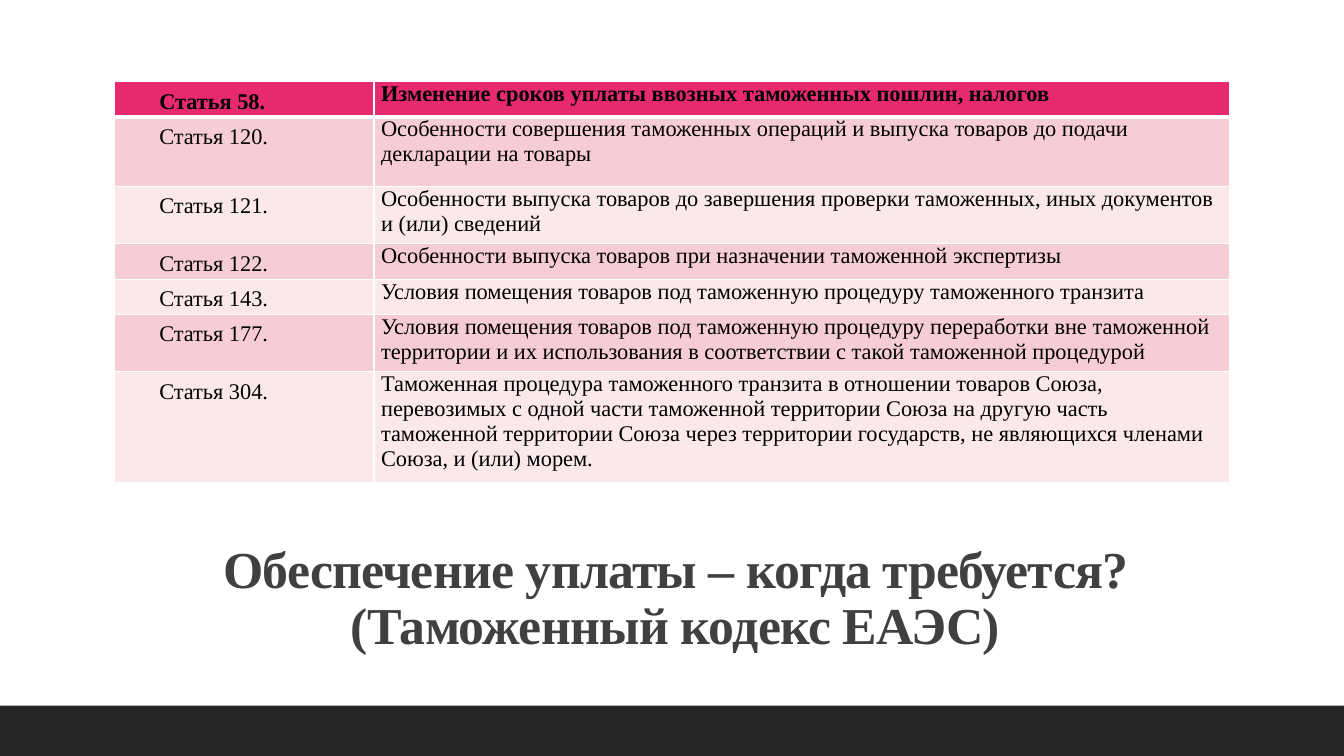
import pptx
import pptx.util
import pptx.dml.color
import pptx.enum.shapes
import pptx.enum.text
import pptx.oxml.ns
import lxml.etree

Inches, Pt = pptx.util.Inches, pptx.util.Pt
ALIGN = pptx.enum.text.PP_ALIGN
ANCHOR = pptx.enum.text.MSO_ANCHOR

TITLE = "Обеспечение уплаты – когда требуется? (Таможенный кодекс ЕАЭС)"
ROWS = [
    (0.35, "Статья 58.", "Изменение сроков уплаты ввозных таможенных пошлин, налогов"),
    (0.69, "Статья 120.", "Особенности совершения таможенных операций и выпуска товаров "
     "до подачи декларации на товары"),
    (0.57, "Статья 121.", "Особенности выпуска товаров до завершения проверки таможенных, "
     "иных документов и (или) сведений"),
    (0.35, "Статья 122.", "Особенности выпуска товаров при назначении таможенной экспертизы"),
    (0.35, "Статья 143.", "Условия помещения товаров под таможенную процедуру "
     "таможенного транзита"),
    (0.57, "Статья 177.", "Условия помещения товаров под таможенную процедуру переработки "
     "вне таможенной территории и их использования в соответствии с такой "
     "таможенной процедурой"),
    (1.1, "Статья 304.", "Таможенная процедура таможенного транзита в отношении товаров "
     "Союза, перевозимых с одной части таможенной территории Союза на другую часть "
     "таможенной территории Союза через территории государств, не являющихся членами "
     "Союза, и (или) морем."),
]
COLS = [2.58, 8.49]
FONT = "Times New Roman"
COLORS = {"bar": "262626", "title": "404040", "text": "000000", "line": "FFFFFF",
          "head": "E7296D", "odd": "F6CDD4", "even": "FAE8EB"}


def paint(fill, name):
    fill.solid()
    fill.fore_color.rgb = pptx.dml.color.RGBColor.from_string(COLORS[name])


def write(para, text, size, color, bold):
    run = para.add_run()
    run.text = text
    run.font.name, run.font.size, run.font.bold = FONT, Pt(size), bold
    paint(run.font.fill, color)
    return run


def edge(cell, side, width):
    qn = pptx.oxml.ns.qn
    props = cell._tc.get_or_add_tcPr()
    line = lxml.etree.SubElement(props, qn("a:ln" + side), w=str(Pt(width)))
    solid = lxml.etree.SubElement(line, qn("a:solidFill"))
    lxml.etree.SubElement(solid, qn("a:srgbClr"), val=COLORS["line"])


def add_bar(slide):
    bar = slide.shapes.add_shape(pptx.enum.shapes.MSO_SHAPE.RECTANGLE,
                                 0, Inches(7), Inches(13.33), Inches(0.5))
    bar.shadow.inherit = False
    paint(bar.fill, "bar")
    bar.line.fill.background()


def add_title(slide):
    box = slide.shapes.add_textbox(Inches(1.2), Inches(5.3), Inches(11), Inches(1.3))
    frame = box.text_frame
    frame.word_wrap = True
    frame.vertical_anchor = ANCHOR.MIDDLE
    para = frame.paragraphs[0]
    para.alignment, para.line_spacing = ALIGN.CENTER, 0.9
    run = write(para, TITLE, 37, "title", True)
    run._r.get_or_add_rPr().set("spc", "-50")


def add_cell(cell, row, col, text):
    cell.margin_left = cell.margin_right = Inches(0.07)
    cell.margin_top = cell.margin_bottom = 0
    cell.vertical_anchor = ANCHOR.TOP
    para = cell.text_frame.paragraphs[0]
    if col == 0:
        para.alignment, para.line_spacing = ALIGN.JUSTIFY, 1.3
        props = para._p.get_or_add_pPr()
        props.set("marL", "0")
        props.set("indent", str(Inches(0.38)))
    write(para, text, 16, "text", row == 0)
    widths = {"L": 1, "R": 1, "T": 3 if row == 1 else 1, "B": 3 if row == 0 else 1}
    for side, width in widths.items():
        edge(cell, side, width)
    paint(cell.fill, "head" if row == 0 else "odd" if row % 2 else "even")


def add_grid(slide):
    high = sum(row[0] for row in ROWS)
    frame = slide.shapes.add_table(len(ROWS), len(COLS), Inches(1.13), Inches(0.81),
                                   Inches(sum(COLS)), Inches(high))
    table = frame.table
    for col, width in enumerate(COLS):
        table.columns[col].width = Inches(width)
    for row, (height, *texts) in enumerate(ROWS):
        table.rows[row].height = Inches(height)
        for col, text in enumerate(texts):
            add_cell(table.cell(row, col), row, col, text)


def main():
    """Build the slide on payment security under the customs code."""
    deck = pptx.Presentation()
    deck.slide_width, deck.slide_height = Inches(13.33), Inches(7.5)
    slide = deck.slides.add_slide(deck.slide_layouts[6])
    add_bar(slide)
    add_title(slide)
    add_grid(slide)
    deck.save("out.pptx")


if __name__ == "__main__":
    main()
